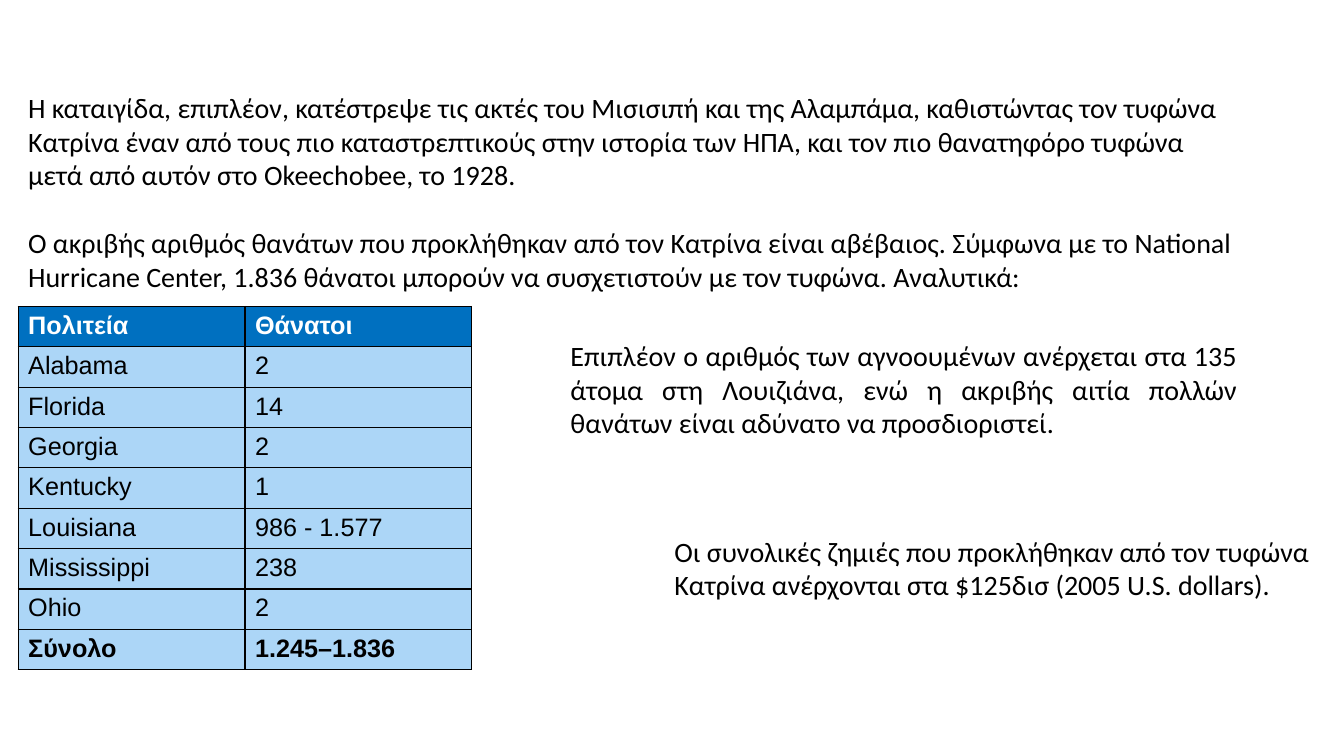
from dataclasses import dataclass

from lxml import etree
from pptx import Presentation
from pptx import util as u
from pptx.dml.color import RGBColor
from pptx.enum import text
from pptx.oxml.ns import qn

EMU_PER_PX = 9144  # 100 px to the inch


@dataclass(frozen=True)
class Theme:
    ink: str = "000000"
    header_ink: str = "FFFFFF"
    header_fill: str = "0070C0"
    row_fill: str = "ACD6F7"
    border: str = "000000"
    border_width: int = 1
    body_font: str = "Calibri"
    body_size: int = 20
    table_font: str = "Arial"
    table_size: int = 18
    paragraph_gap: float = 24.4


THEME = Theme()

STORM_TEXT = [
    "Η καταιγίδα, επιπλέον, κατέστρεψε τις ακτές του Μισισιπή και της Αλαμπάμα, "
    "καθιστώντας τον τυφώνα Κατρίνα έναν από τους πιο καταστρεπτικούς στην ιστορία "
    "των ΗΠΑ, και τον πιο θανατηφόρο τυφώνα μετά από αυτόν στο Okeechobee, το 1928.",
    "Ο ακριβής αριθμός θανάτων που προκλήθηκαν από τον Κατρίνα είναι αβέβαιος. "
    "Σύμφωνα με το National Hurricane Center, 1.836 θάνατοι μπορούν να συσχετιστούν "
    "με τον τυφώνα. Αναλυτικά:",
]
MISSING_TEXT = [
    "Επιπλέον ο αριθμός των αγνοουμένων ανέρχεται στα 135 άτομα στη Λουιζιάνα, ενώ η "
    "ακριβής αιτία πολλών θανάτων είναι αδύνατο να προσδιοριστεί.",
]
DAMAGE_TEXT = [
    "Οι συνολικές ζημιές που προκλήθηκαν από τον τυφώνα Κατρίνα ανέρχονται στα "
    "$125δισ (2005 U.S. dollars).",
]
DEATHS = [
    ("Πολιτεία", "Θάνατοι"),
    ("Alabama", "2"),
    ("Florida", "14"),
    ("Georgia", "2"),
    ("Kentucky", "1"),
    ("Louisiana", "986 - 1.577"),
    ("Mississippi", "238"),
    ("Ohio", "2"),
    ("Σύνολο", "1.245–1.836"),
]


def px(length):
    return u.Emu(length * EMU_PER_PX)


def format_font(font, name, size, color, bold=False):
    font.name = name
    font.size = u.Pt(size)
    font.color.rgb = RGBColor.from_string(color)
    font.bold = bold


def add_body_text(slide, box, paragraphs, alignment=text.PP_ALIGN.LEFT):
    frame = slide.shapes.add_textbox(*map(px, box)).text_frame
    frame.word_wrap = True
    frame.text = "\n".join(paragraphs)
    for index, paragraph in enumerate(frame.paragraphs):
        paragraph.alignment = alignment
        if index:
            paragraph.space_before = u.Pt(THEME.paragraph_gap)
        for run in paragraph.runs:
            format_font(run.font, THEME.body_font, THEME.body_size, THEME.ink)


def add_cell_borders(cell):
    """Draw all four borders; they must precede the fill in the cell properties."""
    properties = cell._tc.get_or_add_tcPr()
    for position, side in enumerate(("a:lnL", "a:lnR", "a:lnT", "a:lnB")):
        line = etree.Element(qn(side), w=str(u.Pt(THEME.border_width)))
        fill = etree.SubElement(line, qn("a:solidFill"))
        etree.SubElement(fill, qn("a:srgbClr"), val=THEME.border)
        properties.insert(position, line)


def add_deaths_table(slide, box, rows):
    left, top, width, height = box
    column_count = len(rows[0])
    table = slide.shapes.add_table(len(rows), column_count, *map(px, box)).table
    table.horz_banding = False
    for column in table.columns:
        column.width = px(width // column_count)
    for row_index, values in enumerate(rows):
        table.rows[row_index].height = px(height // len(rows))
        is_header = row_index == 0
        is_total = row_index == len(rows) - 1
        fill = THEME.header_fill if is_header else THEME.row_fill
        ink = THEME.header_ink if is_header else THEME.ink
        for cell, value in zip(table.rows[row_index].cells, values):
            cell.text = value
            cell.fill.solid()
            cell.fill.fore_color.rgb = RGBColor.from_string(fill)
            add_cell_borders(cell)
            format_font(cell.text_frame.paragraphs[0].runs[0].font,
                        THEME.table_font, THEME.table_size, ink,
                        bold=is_header or is_total)


def add_casualties_slide(presentation):
    slide = presentation.slides.add_slide(presentation.slide_layouts[6])
    add_body_text(slide, (18, 85, 1218, 246), STORM_TEXT)
    add_deaths_table(slide, (18, 304, 450, 360), DEATHS)
    add_body_text(slide, (556, 331, 681, 111), MISSING_TEXT, text.PP_ALIGN.JUSTIFY)
    add_body_text(slide, (659, 525, 654, 77), DAMAGE_TEXT)


def main():
    presentation = Presentation()
    presentation.slide_width = px(1333)
    presentation.slide_height = px(750)
    add_casualties_slide(presentation)
    presentation.save("out.pptx")


if __name__ == "__main__":
    main()
